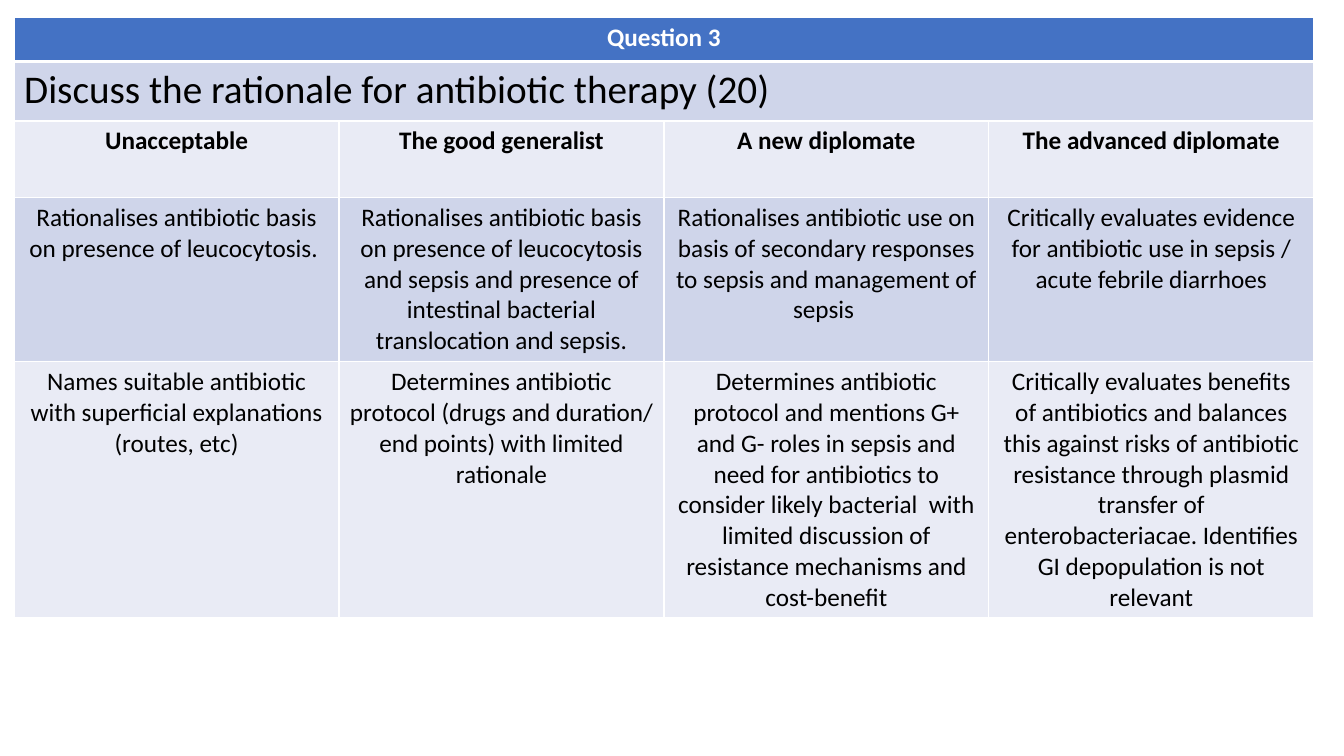
from lxml import etree
from pptx import Presentation
from pptx.dml.color import RGBColor
from pptx.enum.text import PP_ALIGN
from pptx.oxml.ns import qn
from pptx.util import Inches, Pt

LEFT, CENTER = PP_ALIGN.LEFT, PP_ALIGN.CENTER
WHITE = RGBColor(0xFF, 0xFF, 0xFF)
BLACK = RGBColor(0x00, 0x00, 0x00)
BLUE = RGBColor(0x44, 0x72, 0xC4)
BAND_DARK = RGBColor(0xCF, 0xD5, 0xEA)
BAND_LIGHT = RGBColor(0xE9, 0xEB, 0xF5)
FONT = "Calibri"

SLIDE_W, SLIDE_H = 13.33, 7.5
COLUMNS = 4
RUBRIC_BOX = (0.14, 0.17, 12.89)  # left, top, width
THIN, THICK = 1, 3  # border widths in points

# Each row: height, fill, font format, alignment, texts (one text spans the row)
RUBRIC = [
    (0.44, BLUE, {"size": Pt(18), "bold": True, "color": WHITE}, CENTER,
     ["Question 3"]),
    (0.59, BAND_DARK, {"size": Pt(28), "bold": False, "color": BLACK}, LEFT,
     ["Discuss the rationale for antibiotic therapy (20)"]),
    (0.76, BAND_LIGHT, {"size": Pt(18), "bold": True, "color": BLACK}, CENTER,
     ["Unacceptable", "The good generalist", "A new diplomate",
      "The advanced diplomate"]),
    (1.63, BAND_DARK, {"size": Pt(18), "bold": False, "color": BLACK}, CENTER,
     ["Rationalises antibiotic basis on presence of leucocytosis. ",
      "Rationalises antibiotic basis on presence of leucocytosis and sepsis "
      "and presence of intestinal bacterial translocation and sepsis.",
      "Rationalises antibiotic use on basis of secondary responses to sepsis "
      "and management of sepsis ",
      "Critically evaluates evidence for antibiotic use in sepsis / "
      "acute febrile diarrhoes"]),
    (2.54, BAND_LIGHT, {"size": Pt(18), "bold": False, "color": BLACK}, CENTER,
     ["Names suitable antibiotic with superficial explanations (routes, etc)",
      "Determines antibiotic protocol (drugs and duration/ end points) "
      "with limited rationale",
      "Determines antibiotic protocol and mentions G+ and G- roles in sepsis "
      "and need for antibiotics to consider likely bacterial  with limited "
      "discussion of resistance mechanisms and cost-benefit",
      "Critically evaluates benefits of antibiotics and balances this against "
      "risks of antibiotic resistance through plasmid transfer of "
      "enterobacteriacae. Identifies GI depopulation is not relevant"]),
]


def add_borders(cell, top, bottom):
    """Draw white lines on all four sides of a cell."""
    properties = cell._tc.get_or_add_tcPr()
    widths = {"a:lnL": THIN, "a:lnR": THIN, "a:lnT": top, "a:lnB": bottom}
    for side, width in widths.items():
        line = etree.SubElement(properties, qn(side), w=str(Pt(width)))
        fill = etree.SubElement(line, qn("a:solidFill"))
        etree.SubElement(fill, qn("a:srgbClr"), val=str(WHITE))


def write_text(cell, text, font_format, alignment):
    paragraph = cell.text_frame.paragraphs[0]
    paragraph.alignment = alignment
    run = paragraph.add_run()
    run.text = text
    for attribute, value in {"name": FONT, **font_format}.items():
        if attribute == "color":
            run.font.color.rgb = value
        else:
            setattr(run.font, attribute, value)


def add_rubric(slide, left, top, width):
    """Place the marking rubric in the given box."""
    height = sum(row[0] for row in RUBRIC)
    table = slide.shapes.add_table(
        len(RUBRIC), COLUMNS, Inches(left), Inches(top),
        Inches(width), Inches(height)).table
    for column in table.columns:
        column.width = Inches(width / COLUMNS)

    for r, (row_height, fill, font_format, alignment, texts) in enumerate(RUBRIC):
        table.rows[r].height = Inches(row_height)
        # Borders and band colour; the heading has a thick line below it
        for c in range(COLUMNS):
            cell = table.cell(r, c)
            add_borders(cell, top=THICK if r == 1 else THIN,
                        bottom=THICK if r == 0 else THIN)
            cell.fill.solid()
            cell.fill.fore_color.rgb = fill
        # Wording
        if len(texts) == 1:
            table.cell(r, 0).merge(table.cell(r, COLUMNS - 1))
        for c, text in enumerate(texts):
            write_text(table.cell(r, c), text, font_format, alignment)


def main():
    deck = Presentation()
    deck.slide_width, deck.slide_height = Inches(SLIDE_W), Inches(SLIDE_H)
    slide = deck.slides.add_slide(deck.slide_layouts[6])
    add_rubric(slide, *RUBRIC_BOX)
    deck.save("out.pptx")


if __name__ == "__main__":
    main()
